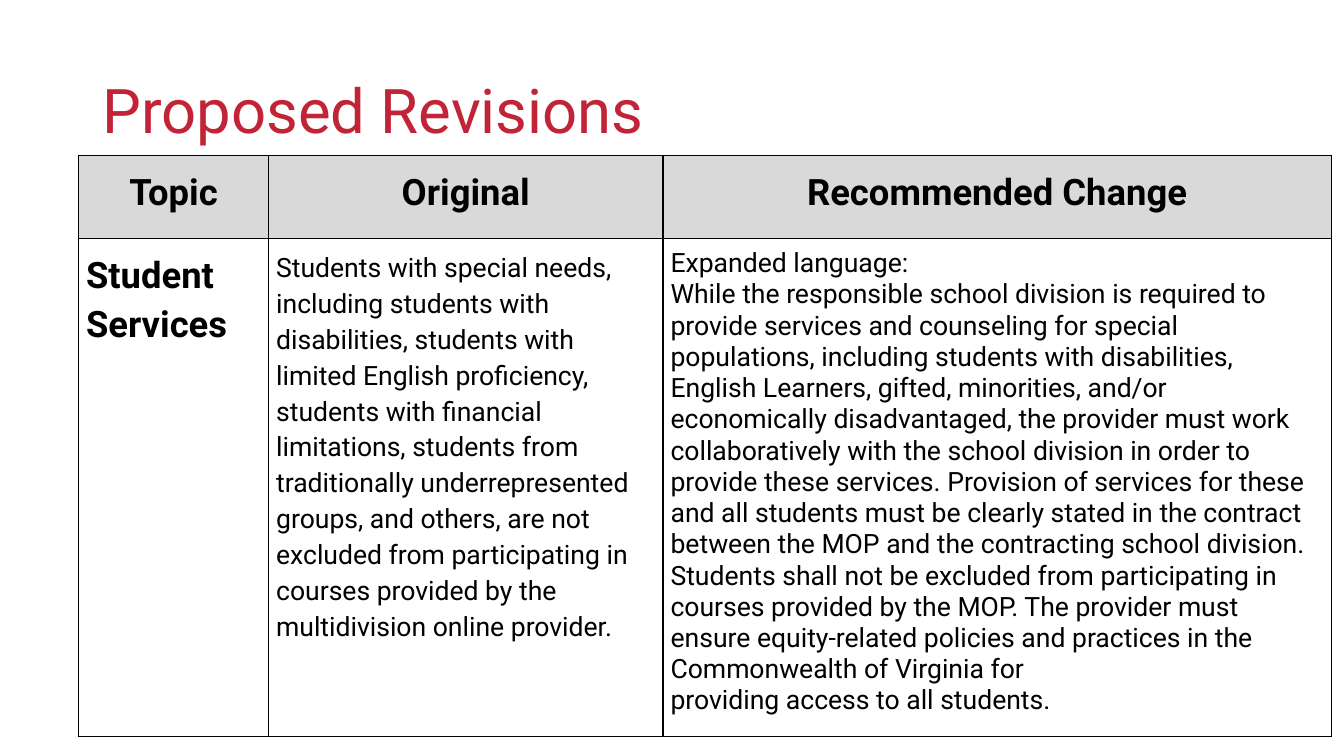
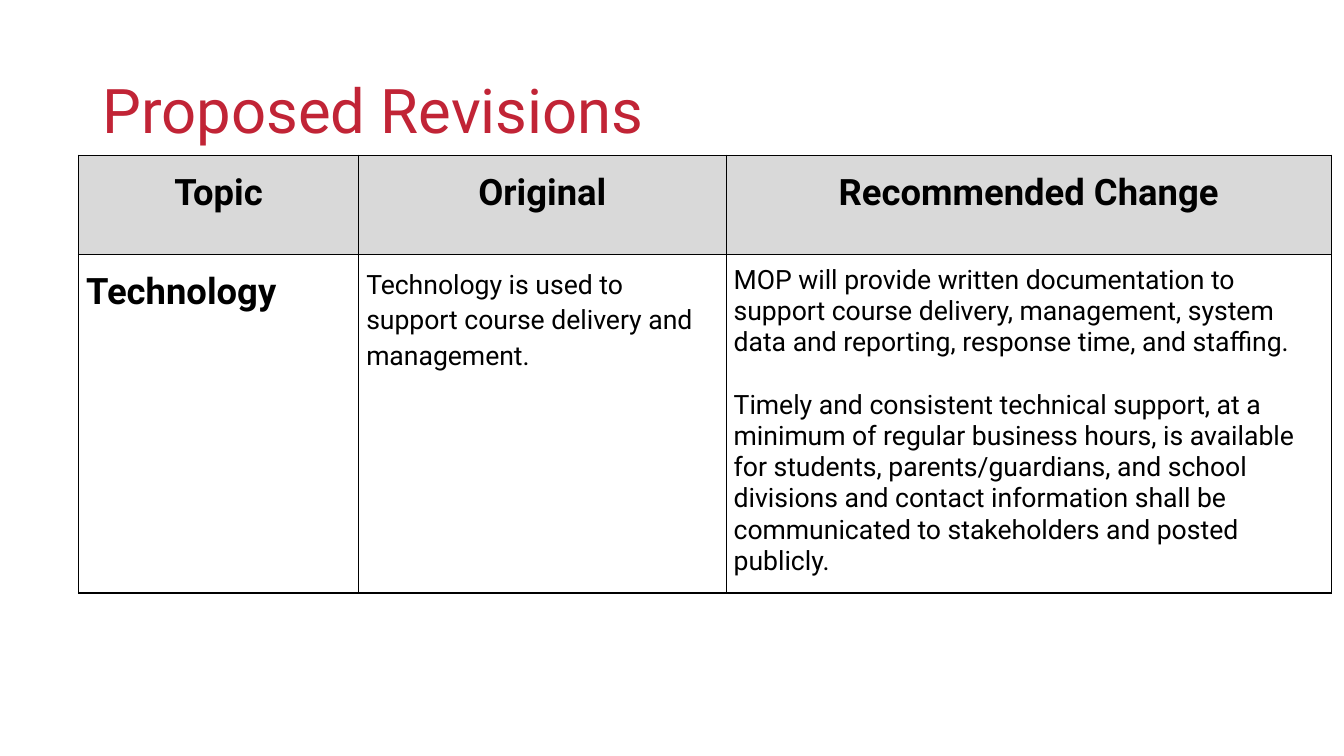
import pptx
import pptx.util
import pptx.dml.color
import pptx.enum.text
import pptx.oxml
import pptx.oxml.ns

Cm = pptx.util.Cm
Pt = pptx.util.Pt
ALIGN = pptx.enum.text.PP_ALIGN


def color(value):
    return pptx.dml.color.RGBColor.from_string(value)


class Deck:
    FONT = "Roboto"
    RED = "C12436"
    BLACK = "000000"
    WHITE = "FFFFFF"
    GRAY = "D9D9D9"
    HEADINGS = ("Topic", "Original", "Recommended Change")
    TABLE_LEFT, TABLE_TOP, TABLE_WIDTH = 1.98, 3.91, 31.58

    def __init__(self):
        self.presentation = pptx.Presentation()
        self.presentation.slide_width = Cm(33.87)
        self.presentation.slide_height = Cm(19.05)
        self.slide = None

    def add_slide(self, title):
        self.slide = self.presentation.slides.add_slide(self.presentation.slide_layouts[6])
        frame = self.slide.shapes.add_textbox(Cm(2.34), Cm(1.02), Cm(29.21), Cm(3.68)).text_frame
        frame.word_wrap = True
        frame.vertical_anchor = pptx.enum.text.MSO_ANCHOR.MIDDLE
        self.style(frame.paragraphs[0], title, 44, self.RED, spacing=0.9)

    def style(self, paragraph, text, size, ink=BLACK, bold=False, spacing=1.0, after=0,
              align=ALIGN.LEFT):
        paragraph.text = text
        paragraph.alignment = align
        paragraph.line_spacing = spacing
        paragraph.space_after = Pt(after)
        font = paragraph.font
        font.name, font.size, font.bold = self.FONT, Pt(size), bold
        font.color.rgb = color(ink)

    def cell(self, cell, paragraphs, fill, size, gap=0, **look):
        cell.margin_left = cell.margin_right = Cm(0.19)
        cell.margin_top = cell.margin_bottom = Cm(0.25)
        self.borders(cell)
        cell.fill.solid()
        cell.fill.fore_color.rgb = color(fill)
        frame = cell.text_frame
        for index, text in enumerate(paragraphs):
            paragraph = frame.add_paragraph() if index else frame.paragraphs[0]
            self.style(paragraph, text, size, **look)
            if index:
                paragraph.space_before = Pt(gap)

    def borders(self, cell):
        properties = cell._tc.get_or_add_tcPr()
        for side in ("lnL", "lnR", "lnT", "lnB"):
            properties.append(pptx.oxml.parse_xml(
                f'<a:{side} {pptx.oxml.ns.nsdecls("a")} w="12700"><a:solidFill>'
                f'<a:srgbClr val="{self.BLACK}"/></a:solidFill></a:{side}>'))

    def revision_table(self, widths, heights, topic, original, change, gap=0):
        table = self.slide.shapes.add_table(
            2, 3, Cm(self.TABLE_LEFT), Cm(self.TABLE_TOP),
            Cm(self.TABLE_WIDTH), Cm(sum(heights))).table
        table.first_row = table.horz_banding = False
        for column, width in zip(table.columns, (*widths, self.TABLE_WIDTH - sum(widths))):
            column.width = Cm(width)
        for row, height in zip(table.rows, heights):
            row.height = Cm(height)
        for index, heading in enumerate(self.HEADINGS):
            self.cell(table.cell(0, index), [heading], self.GRAY, 26, bold=True,
                      spacing=1.15, after=12, align=ALIGN.CENTER)
        self.cell(table.cell(1, 0), [topic], self.WHITE, 26, bold=True, spacing=1.15, after=12)
        self.cell(table.cell(1, 1), [original], self.WHITE, 19, spacing=1.15)
        self.cell(table.cell(1, 2), change, self.WHITE, 19, gap=gap)


def main():
    deck = Deck()

    deck.add_slide("Proposed Revisions")
    deck.revision_table(
        (4.79, 9.94), (2.09, 12.32), "Student Services",
        "Students with special needs, including students with disabilities, students with "
        "limited English proficiency, students with financial limitations, students from "
        "traditionally underrepresented groups, and others, are not excluded from "
        "participating in courses provided by the multidivision online provider.",
        ["Expanded language:",
         "While the responsible school division is required to provide services and "
         "counseling for special populations, including students with disabilities, English "
         "Learners, gifted, minorities, and/or economically disadvantaged, the provider must "
         "work collaboratively with the school division in order to provide these services. "
         "Provision of services for these and all students must be clearly stated in the "
         "contract between the MOP and the contracting school division. Students shall not "
         "be excluded from participating in courses provided by the MOP. The provider must "
         "ensure equity-related policies and practices in the Commonwealth of Virginia for"
         "\vproviding access to all students."])

    deck.add_slide("Proposed Revisions")
    deck.revision_table(
        (7.06, 9.26), (2.51, 8.37), "Technology",
        "Technology is used to support course delivery and management.",
        ["MOP will provide written documentation to support course delivery, management, "
         "system data and reporting, response time, and staffing.",
         "Timely and consistent technical support, at a minimum of regular business hours, "
         "is available for students, parents/guardians, and school divisions and contact "
         "information shall be communicated to stakeholders and posted publicly."],
        gap=22.3)

    deck.presentation.save("out.pptx")


if __name__ == "__main__":
    main()
